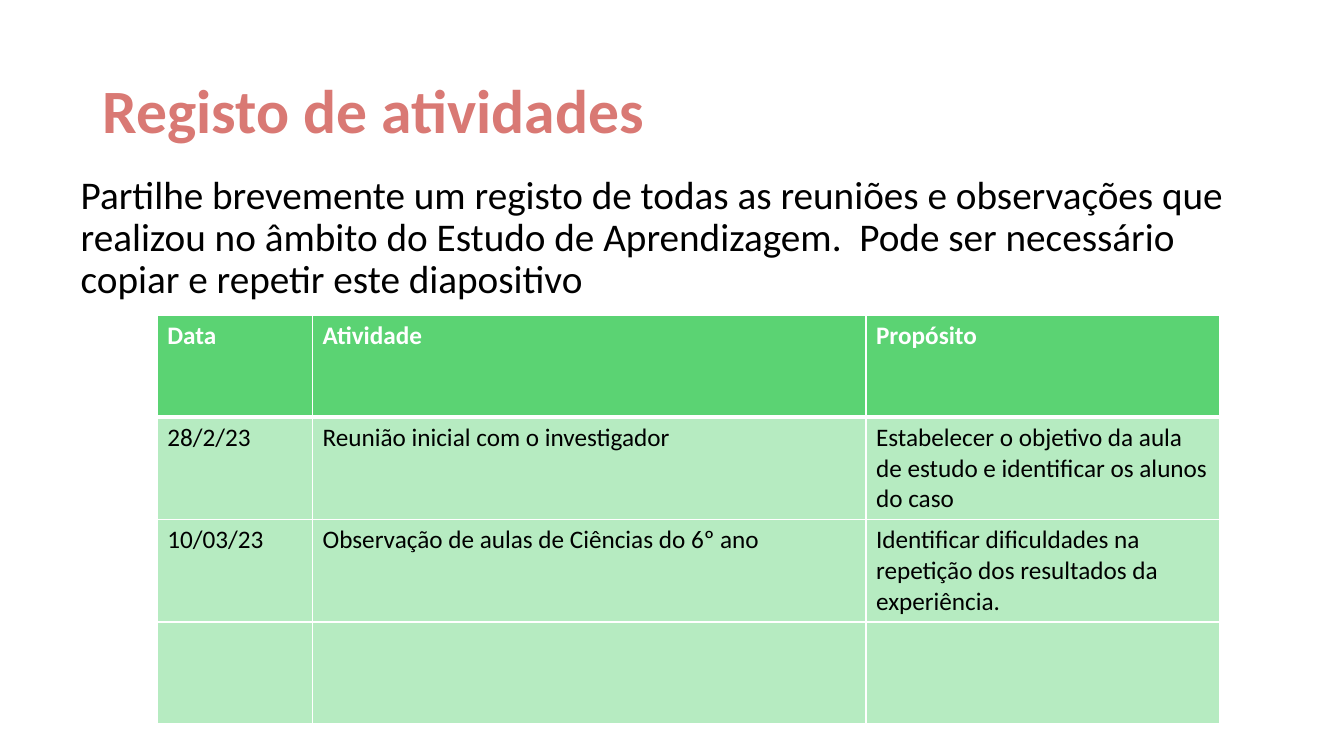
from dataclasses import dataclass

from lxml.etree import SubElement
from pptx import Presentation
from pptx.dml.color import RGBColor as Rgb
from pptx.enum.text import MSO_ANCHOR as Anchor, MSO_AUTO_SIZE as Fit, PP_ALIGN as Align
from pptx.oxml import parse_xml
from pptx.oxml.ns import nsdecls, qn
from pptx.util import Pt

PX = 9144


@dataclass(frozen=True)
class Theme:
    font: str = "Calibri"
    coral: str = "D97974"
    ink: str = "000000"
    white: str = "FFFFFF"
    green: str = "5BD373"
    tint: int = 44
    title: int = 44
    body: int = 28
    cell: int = 18
    thin: int = 1
    thick: int = 3


@dataclass(frozen=True)
class Box:
    left: int
    top: int
    width: int
    height: int


@dataclass(frozen=True)
class Entry:
    date: str = ""
    task: str = ""
    goal: str = ""


THEME = Theme()
HEAD = Entry("Data", "Atividade", "Propósito")
LOG = [
    Entry("28/2/23", "Reunião inicial com o investigador",
          "Estabelecer o objetivo da aula de estudo e identificar os alunos do caso"),
    Entry("10/03/23", "Observação de aulas de Ciências do 6º ano",
          "Identificar dificuldades na repetição dos resultados da experiência."),
    Entry(),
]
WIDTHS = (154, 549, 351)
ROW = 101
PROMPT = ("Partilhe brevemente um registo de todas as reuniões e observações que "
          "realizou no âmbito do Estudo de Aprendizagem.  Pode ser necessário "
          "copiar e repetir este diapositivo")


def style(para, size: int, color: str, bold: bool = False) -> None:
    font = para.font
    font.name = THEME.font
    font.size = Pt(size)
    font.bold = bold
    font.color.rgb = Rgb.from_string(color)


def place(shape, box: Box) -> None:
    shape.left, shape.top = box.left * PX, box.top * PX
    shape.width, shape.height = box.width * PX, box.height * PX


def write(shape, box: Box, text: str, anchor: Anchor):
    place(shape, box)
    frame = shape.text_frame
    frame.text = text
    frame.word_wrap = True
    frame.auto_size = Fit.NONE
    frame.vertical_anchor = anchor
    para = frame.paragraphs[0]
    para.alignment = Align.LEFT
    para.line_spacing = 0.9
    return para


def plain(para) -> None:
    props = para._p.get_or_add_pPr()
    props.set("marL", "0")
    props.set("indent", "0")
    SubElement(props, qn("a:buNone"))


def edge(cell, side: str, width: int, slot: int) -> None:
    line = parse_xml(
        f'<a:ln{side} {nsdecls("a")} w="{Pt(width)}"><a:solidFill>'
        f'<a:srgbClr val="{THEME.white}"/></a:solidFill></a:ln{side}>')
    cell._tc.get_or_add_tcPr().insert(slot, line)


def paint(cell, text: str, row: int) -> None:
    head = row == 0
    cell.text = text
    style(cell.text_frame.paragraphs[0], THEME.cell,
          THEME.white if head else THEME.ink, head)
    cell.fill.solid()
    cell.fill.fore_color.rgb = Rgb.from_string(THEME.green)
    if not head:
        tone = cell._tc.tcPr.find(".//" + qn("a:srgbClr"))
        SubElement(tone, qn("a:alpha")).set("val", str(THEME.tint * 1000))
    bold = {"T": row == 1, "B": head}
    for slot, side in enumerate("LRTB"):
        edge(cell, side, THEME.thick if bold.get(side) else THEME.thin, slot)


def draw(slide, left: int, top: int) -> None:
    rows = [HEAD, *LOG]
    table = slide.shapes.add_table(
        len(rows), len(WIDTHS), left * PX, top * PX,
        sum(WIDTHS) * PX, len(rows) * ROW * PX).table
    for col, width in zip(table.columns, WIDTHS):
        col.width = width * PX
    for row, entry in enumerate(rows):
        table.rows[row].height = ROW * PX
        for col, text in enumerate((entry.date, entry.task, entry.goal)):
            paint(table.cell(row, col), text, row)


def main() -> None:
    deck = Presentation()
    deck.slide_width, deck.slide_height = 1333 * PX, 750 * PX
    slide = deck.slides.add_slide(deck.slide_layouts[1])
    title = write(slide.shapes.title, Box(92, 40, 1150, 145),
                  "Registo de atividades", Anchor.MIDDLE)
    style(title, THEME.title, THEME.coral, True)
    body = write(slide.placeholders[1], Box(70, 169, 1171, 507), PROMPT, Anchor.TOP)
    body.space_before = Pt(10)
    plain(body)
    style(body, THEME.body, THEME.ink)
    draw(slide, 156, 313)
    deck.save("out.pptx")


if __name__ == "__main__":
    main()
